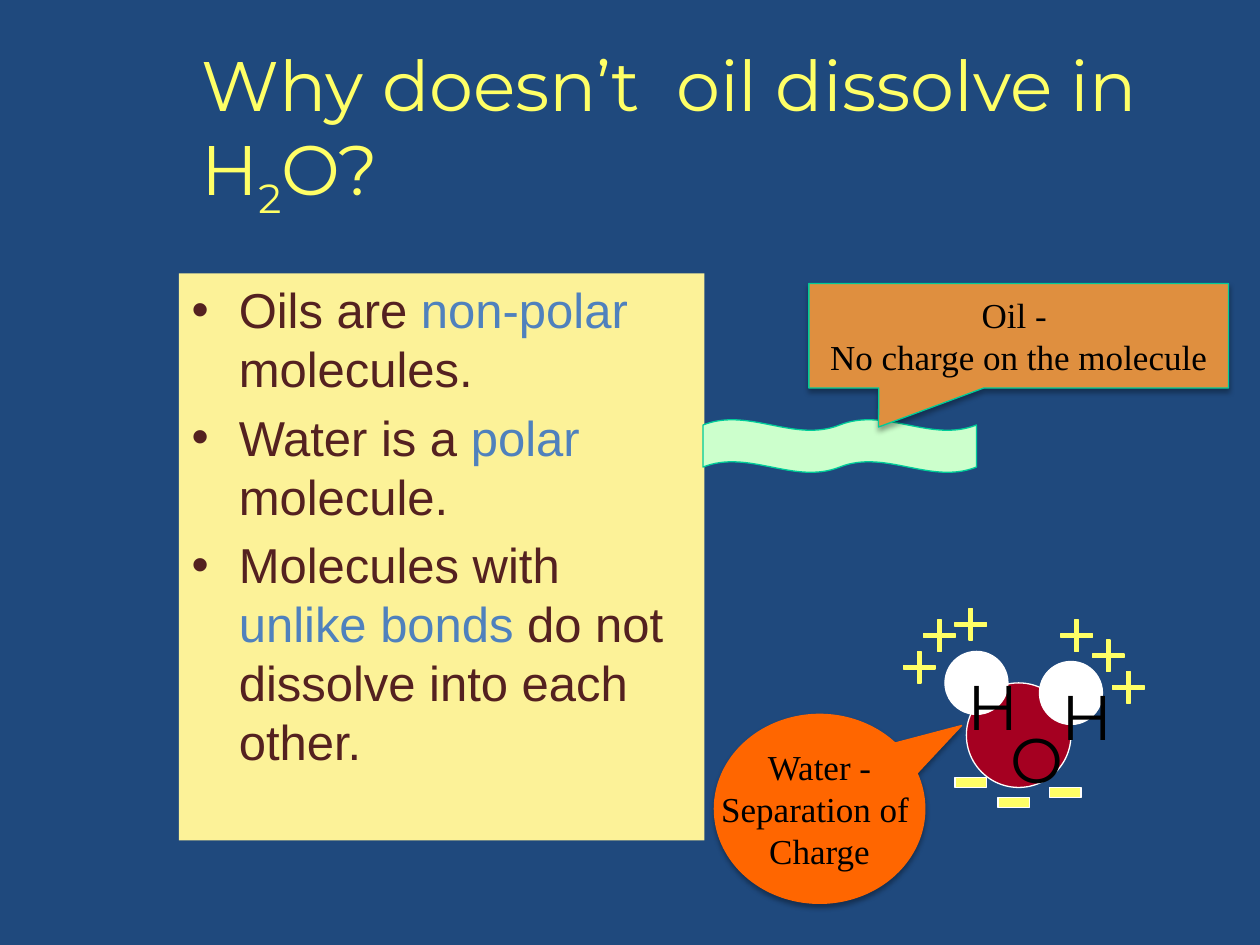
from dataclasses import dataclass

import pptx
import pptx.dml.color
import pptx.enum.shapes
import pptx.enum.text
import pptx.oxml.ns
import pptx.util
from lxml import etree

Inches, Pt = pptx.util.Inches, pptx.util.Pt
MSO = pptx.enum.shapes.MSO_SHAPE
ALIGN = pptx.enum.text.PP_ALIGN
ANCHOR = pptx.enum.text.MSO_ANCHOR
FIT = pptx.enum.text.MSO_AUTO_SIZE
qn = pptx.oxml.ns.qn


@dataclass(frozen=True)
class Theme:
    back: str = "1F497D"
    yellow: str = "FFFF66"
    cream: str = "FCF298"
    brown: str = "542120"
    blue: str = "4F81BD"
    mint: str = "CCFFCC"
    green: str = "00CC99"
    tan: str = "DF8F3F"
    orange: str = "FF6600"
    red: str = "A50021"
    white: str = "FFFFFF"
    black: str = "000000"
    title: int = 40
    body: int = 28
    label: int = 20
    atom: int = 36
    head: str = "Montserrat"
    text: str = "Arial"
    note: str = "Times New Roman"


T = Theme()


def paint(fill, color):
    fill.solid()
    fill.fore_color.rgb = pptx.dml.color.RGBColor.from_string(color)


def put(item, values):
    for name, value in values.items():
        setattr(item, name, value)


def place(item, box):
    put(item, dict(zip(("left", "top", "width", "height"), map(Inches, box))))


def write(par, text, color, **font):
    run = par.add_run()
    run.text = text
    put(run.font, font)
    paint(run.font.fill, color)
    return run


def draw(group, kind, box, fill, line, adjust=()):
    shape = group.shapes.add_shape(kind, *map(Inches, box))
    shape.shadow.inherit = False
    paint(shape.fill, fill)
    paint(shape.line.fill, line)
    shape.line.width = Pt(0.75)
    for i, value in enumerate(adjust):
        shape.adjustments[i] = value
    return shape


def shade(shape):
    """Give the shape a soft shadow straight below it."""
    effects = shape._element.spPr.find(qn("a:effectLst"))
    outer = etree.SubElement(effects, qn("a:outerShdw"), blurRad=str(Pt(3.1)),
                             dist=str(Pt(1.8)), dir="5400000", rotWithShape="0")
    color = etree.SubElement(outer, qn("a:srgbClr"), val=T.black)
    etree.SubElement(color, qn("a:alpha"), val="35000")


def callout(group, kind, box, fill, line, adjust, lines):
    shape = draw(group, kind, box, fill, line, adjust)
    shade(shape)
    frame = shape.text_frame
    put(frame, dict(word_wrap=False, vertical_anchor=ANCHOR.MIDDLE))
    for i, text in enumerate(lines):
        par = frame.add_paragraph() if i else frame.paragraphs[0]
        par.alignment = ALIGN.CENTER
        write(par, text, T.black, size=Pt(T.label), name=T.note)


def letter(group, text, left, top):
    box = group.shapes.add_textbox(*map(Inches, (left, top, 0.3, 0.33)))
    box.text_frame.word_wrap = False
    par = box.text_frame.paragraphs[0]
    par.alignment = ALIGN.CENTER
    run = write(par, text, T.black, size=Pt(T.atom), name=T.head)
    line = etree.Element(qn("a:ln"), w=str(Pt(0.75)))
    fill = etree.SubElement(line, qn("a:solidFill"))
    etree.SubElement(fill, qn("a:srgbClr"), val=T.black)
    run._r.get_or_add_rPr().insert(0, line)


def add_title(shape):
    place(shape, (1.5, 0.42, 8.5, 1.25))
    frame = shape.text_frame
    put(frame, dict(auto_size=FIT.NONE, vertical_anchor=ANCHOR.MIDDLE))
    par = frame.paragraphs[0]
    par.alignment = ALIGN.LEFT
    parts = ("Why doesn’t  oil dissolve in H", 0), ("2", -25000), ("O?", 0)
    for text, base in parts:
        run = write(par, text, T.yellow, size=Pt(T.title), name=T.head)
        if base:
            run._r.get_or_add_rPr().set("baseline", str(base))


def add_body(shape):
    place(shape, (1.42, 2.17, 4.17, 4.5))
    paint(shape.fill, T.cream)
    frame = shape.text_frame
    frame.auto_size = FIT.NONE
    points = (
        ("Oils are ", "non-polar", " molecules."),
        ("Water is a ", "polar", " molecule."),
        ("Molecules with ", "unlike bonds", " do not dissolve into each other."),
    )
    for i, parts in enumerate(points):
        par = frame.add_paragraph() if i else frame.paragraphs[0]
        par.space_before = Pt(0.2 * T.body if i else 0)
        for text, color in zip(parts, (T.brown, T.blue, T.brown)):
            write(par, text, color, size=Pt(T.body), name=T.text)


def add_oil(group):
    draw(group, MSO.DOUBLE_WAVE, (5.58, 3.33, 2.17, 0.42), T.mint, T.green,
         (0.103, 0))
    callout(group, MSO.RECTANGULAR_CALLOUT, (6.42, 2.25, 3.33, 0.83), T.tan,
            T.green, (-0.334, 0.873), ("Oil - ", "No charge on the molecule"))


def add_water(group):
    atoms = (7.67, 5.42, 0.83, T.red), (7.5, 5.17, 0.5, T.white), (8.25, 5.25, 0.5, T.white)
    for left, top, size, color in atoms:
        draw(group, MSO.OVAL, (left, top, size, size), color, T.white)
    for text, left, top in (("H", 7.58, 5.25), ("H", 8.33, 5.33), ("O", 7.92, 5.67)):
        letter(group, text, left, top)
    plus = ((7.33, 4.92), (7.58, 4.83), (7.17, 5.17),
            (8.67, 5.08), (8.42, 4.92), (8.83, 5.33))
    for left, top in plus:
        draw(group, MSO.CROSS, (left, top, 0.25, 0.25), T.yellow, T.yellow, (0.44,))
    for left, top in ((7.58, 6.17), (7.92, 6.33), (8.33, 6.25)):
        draw(group, MSO.RECTANGLE, (left, top, 0.25, 0.08), T.yellow, T.white)
    callout(group, MSO.OVAL_CALLOUT, (5.67, 5.67, 1.67, 1.5), T.orange,
            T.orange, (0.675, -0.441), ("Water -", "Separation of ", "Charge"))


def main():
    deck = pptx.Presentation()
    put(deck, dict(slide_width=Inches(10), slide_height=Inches(7.5)))
    slide = deck.slides.add_slide(deck.slide_layouts[1])
    paint(slide.background.fill, T.back)
    add_title(slide.shapes.title)
    add_body(slide.placeholders[1])
    add_oil(slide.shapes.add_group_shape())
    add_water(slide.shapes.add_group_shape())
    deck.save("out.pptx")


if __name__ == "__main__":
    main()
